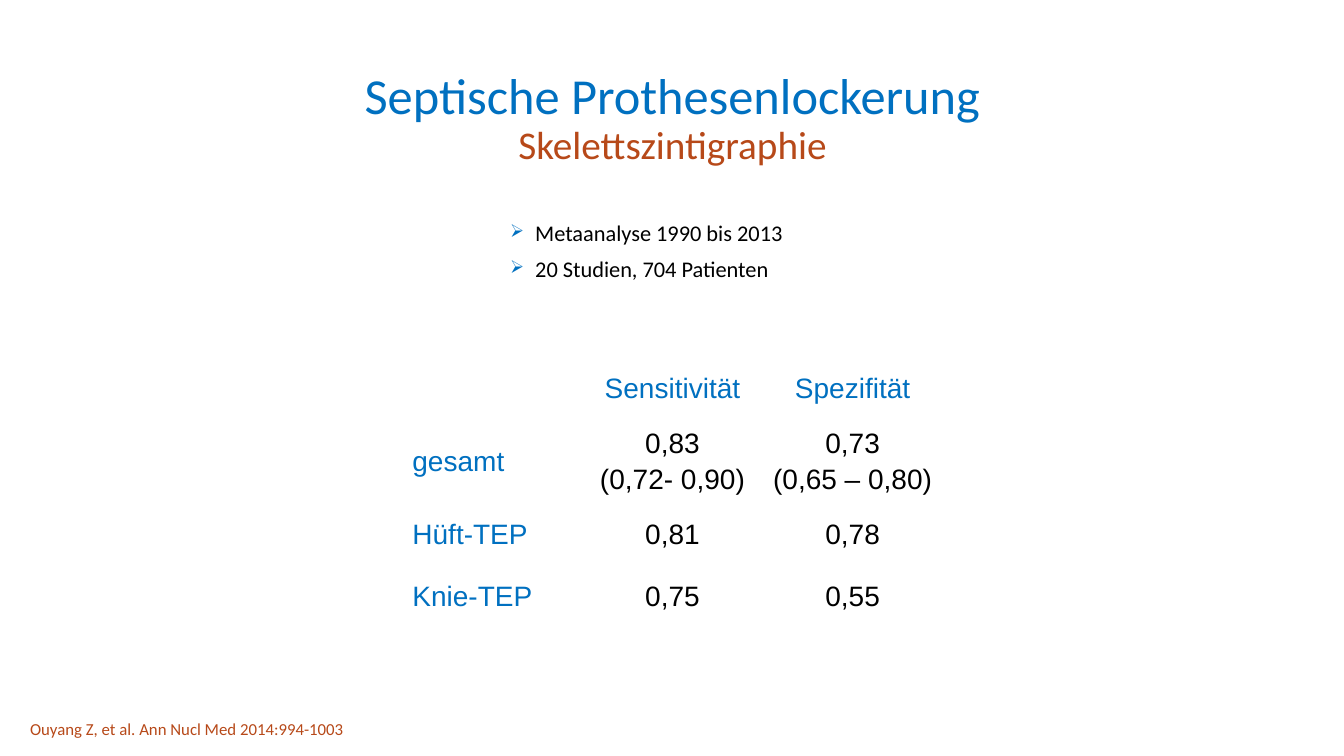
from lxml.etree import SubElement
from pptx import Presentation
from pptx.dml.color import RGBColor
from pptx.enum.text import MSO_ANCHOR, PP_ALIGN
from pptx.oxml.ns import qn
from pptx.util import Pt

PX = 9144
BLUE = RGBColor(0x00, 0x70, 0xC0)
RUST = RGBColor(0xB7, 0x49, 0x19)
BLACK = RGBColor(0, 0, 0)

TITLE = "Septische Prothesenlockerung"
SUBTITLE = "Skelettszintigraphie"
FACTS = ["Metaanalyse 1990 bis 2013", "20 Studien, 704 Patienten"]
RESULTS = [
    ["", "Sensitivität", "Spezifität"],
    ["gesamt", "0,83\n(0,72- 0,90)", "0,73\n(0,65 – 0,80)"],
    ["Hüft-TEP", "0,81", "0,78"],
    ["Knie-TEP", "0,75", "0,55"],
]
ROW_HEIGHTS = [62, 80, 62, 62]
CITATION = "Ouyang Z, et al. Ann Nucl Med 2014:994-1003"


def format_run(run, font_name, size, color):
    run.font.name = font_name
    run.font.size = Pt(size)
    run.font.bold = False
    run.font.color.rgb = color


def add_text_frame(slide, box):
    text_frame = slide.shapes.add_textbox(*[length * PX for length in box]).text_frame
    text_frame.word_wrap = True
    return text_frame


def add_title(slide, box):
    text_frame = add_text_frame(slide, box)
    text_frame.vertical_anchor = MSO_ANCHOR.MIDDLE
    paragraph = text_frame.paragraphs[0]
    paragraph.text = f"{TITLE}\v{SUBTITLE}"
    paragraph.alignment = PP_ALIGN.CENTER
    paragraph.line_spacing = 0.9
    title_run, subtitle_run = paragraph.runs
    format_run(title_run, "Calibri", 36, BLUE)
    format_run(subtitle_run, "Calibri", 28, RUST)


def add_bullet(paragraph, indent):
    properties = paragraph._p.get_or_add_pPr()
    properties.set("marL", str(indent * PX))
    properties.set("indent", str(-indent * PX))
    color = SubElement(properties, qn("a:buClr"))
    SubElement(color, qn("a:srgbClr"), val=str(BLUE))
    SubElement(properties, qn("a:buSzPct"), val="80000")
    SubElement(properties, qn("a:buChar"), char="➢")


def add_facts(slide, box):
    text_frame = add_text_frame(slide, box)
    text_frame.text = "\n".join(FACTS)
    for index, paragraph in enumerate(text_frame.paragraphs):
        paragraph.line_spacing = 0.9
        paragraph.space_before = Pt(8 if index else 0)
        add_bullet(paragraph, 25)
        format_run(paragraph.runs[0], "Calibri", 16, BLACK)


def fill_cell(cell, text, is_label, is_centered):
    cell.fill.background()
    cell.vertical_anchor = MSO_ANCHOR.MIDDLE
    cell.text_frame.text = text
    for index, paragraph in enumerate(cell.text_frame.paragraphs):
        paragraph.alignment = PP_ALIGN.CENTER if is_centered else PP_ALIGN.LEFT
        paragraph.space_before = Pt(4 if index else 0)
        for run in paragraph.runs:
            format_run(run, "Arial", 20, BLUE if is_label else BLACK)


def add_results(slide, box):
    frame = slide.shapes.add_table(
        len(RESULTS), len(RESULTS[0]), *[length * PX for length in box]
    )
    table = frame.table
    table.first_row = False
    table.horz_banding = False
    for row, height in zip(table.rows, ROW_HEIGHTS):
        row.height = height * PX
    for row_index, values in enumerate(RESULTS):
        for column_index, text in enumerate(values):
            is_label = row_index == 0 or column_index == 0
            cell = table.cell(row_index, column_index)
            fill_cell(cell, text, is_label, column_index > 0)


def add_citation(slide, box):
    text_frame = add_text_frame(slide, box)
    text_frame.text = CITATION
    format_run(text_frame.paragraphs[0].runs[0], "Calibri", 12, RUST)


def main():
    presentation = Presentation()
    presentation.slide_width = 1333 * PX
    presentation.slide_height = 750 * PX
    slide = presentation.slides.add_slide(presentation.slide_layouts[6])
    add_title(slide, (217, 60, 900, 117))
    add_facts(slide, (496, 216, 342, 95))
    add_results(slide, (399, 355, 536, sum(ROW_HEIGHTS)))
    add_citation(slide, (20, 708, 394, 30))
    presentation.save("out.pptx")


if __name__ == "__main__":
    main()
